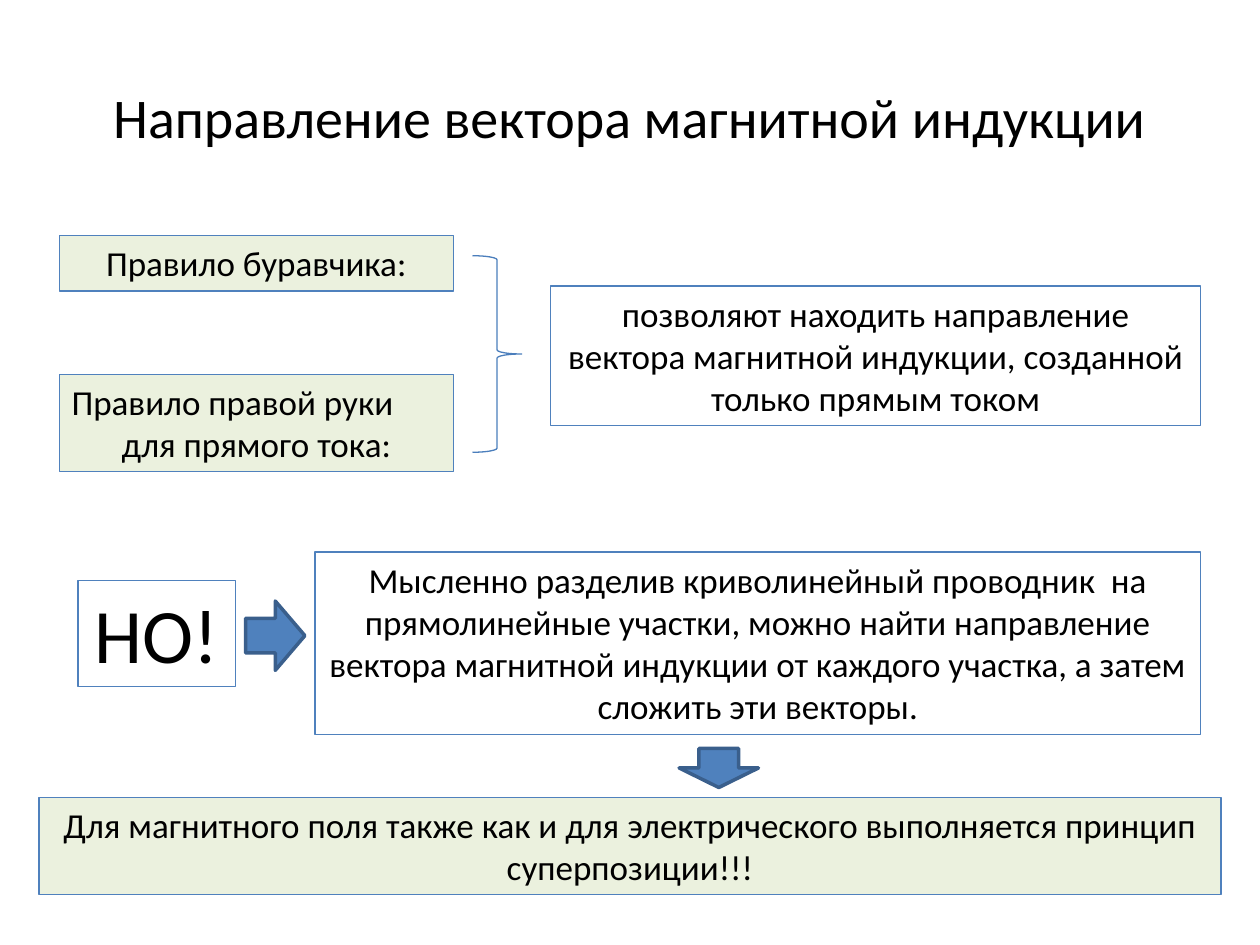
from pptx import Presentation
from pptx.dml.color import RGBColor
from pptx.enum.shapes import MSO_SHAPE as Shape
from pptx.enum.text import MSO_ANCHOR as Anchor, MSO_AUTO_SIZE as AutoSize, PP_ALIGN as Align
from pptx.util import Inches, Pt

BLACK, BLUE, GREEN = "000000", "4F81BD", "EBF1DE"
BRACE_LINE, ARROW_LINE = "4B7EBC", "3A5F8C"


def color(hex_code):
    return RGBColor.from_string(hex_code)


def write(frame, *lines, size=20, aligns=(Align.CENTER,), anchor=Anchor.TOP, fit=True):
    """Write one paragraph per line; the last alignment serves the remaining lines."""
    frame.word_wrap = True
    frame.vertical_anchor = anchor
    frame.auto_size = AutoSize.SHAPE_TO_FIT_TEXT if fit else AutoSize.NONE
    for index, line in enumerate(lines):
        paragraph = frame.paragraphs[0] if index == 0 else frame.add_paragraph()
        paragraph.alignment = aligns[min(index, len(aligns) - 1)]
        run = paragraph.add_run()
        run.text = line
        run.font.name = "Calibri"
        run.font.size = Pt(size)
        run.font.color.rgb = color(BLACK)


class SlideBuilder:
    def __init__(self, slide):
        self.shapes = slide.shapes

    def title(self, text, *place):
        heading = self.shapes.add_textbox(*map(Inches, place))
        write(heading.text_frame, text, size=32, anchor=Anchor.MIDDLE, fit=False)

    def figure(self, kind, *place, fill=None, line=BLUE, width=0.75):
        figure = self.shapes.add_shape(kind, *map(Inches, place))
        figure.shadow.inherit = False
        if fill:
            figure.fill.solid()
            figure.fill.fore_color.rgb = color(fill)
        else:
            figure.fill.background()
        figure.line.color.rgb = color(line)
        figure.line.width = Pt(width)
        return figure

    def box(self, *lines, place, fill=None, **text_format):
        box = self.figure(Shape.RECTANGLE, *place, fill=fill)
        write(box.text_frame, *lines, **text_format)

    def arrow(self, kind, *place):
        self.figure(kind, *place, fill=BLUE, line=ARROW_LINE, width=2)


def main():
    prs = Presentation()
    prs.slide_width, prs.slide_height = Inches(10), Inches(7.5)
    page = SlideBuilder(prs.slides.add_slide(prs.slide_layouts[6]))

    page.title("Направление вектора магнитной индукции", 0.5, 0.3, 9, 1.25)

    # Two rules and what they give
    page.box("Правило буравчика:", place=(0.47, 1.87, 3.13, 0.44), fill=GREEN)
    page.box("позволяют находить направление вектора магнитной индукции, "
             "созданной только прямым током", place=(4.37, 2.27, 5.16, 1.11))
    page.box("Правило правой руки", "для прямого тока:", place=(0.47, 2.97, 3.13, 0.77),
             fill=GREEN, aligns=(Align.LEFT, Align.CENTER))
    page.figure(Shape.RIGHT_BRACE, 3.75, 2.03, 0.39, 1.56, line=BRACE_LINE)

    # The curved conductor
    page.box("НО!", place=(0.62, 4.61, 1.25, 0.84), size=44)
    page.box("Мысленно разделив криволинейный проводник  на прямолинейные участки, "
             "можно найти направление вектора магнитной индукции от каждого участка, "
             "а затем сложить эти векторы.", place=(2.5, 4.38, 7.03, 1.45))
    page.arrow(Shape.RIGHT_ARROW, 1.95, 4.77, 0.47, 0.55)

    # Conclusion
    page.arrow(Shape.DOWN_ARROW, 5.39, 5.94, 0.63, 0.31)
    page.box("Для магнитного поля также как и для электрического выполняется "
             "принцип суперпозиции!!!", place=(0.31, 6.33, 9.38, 0.77), fill=GREEN)

    prs.save("out.pptx")


if __name__ == "__main__":
    main()
